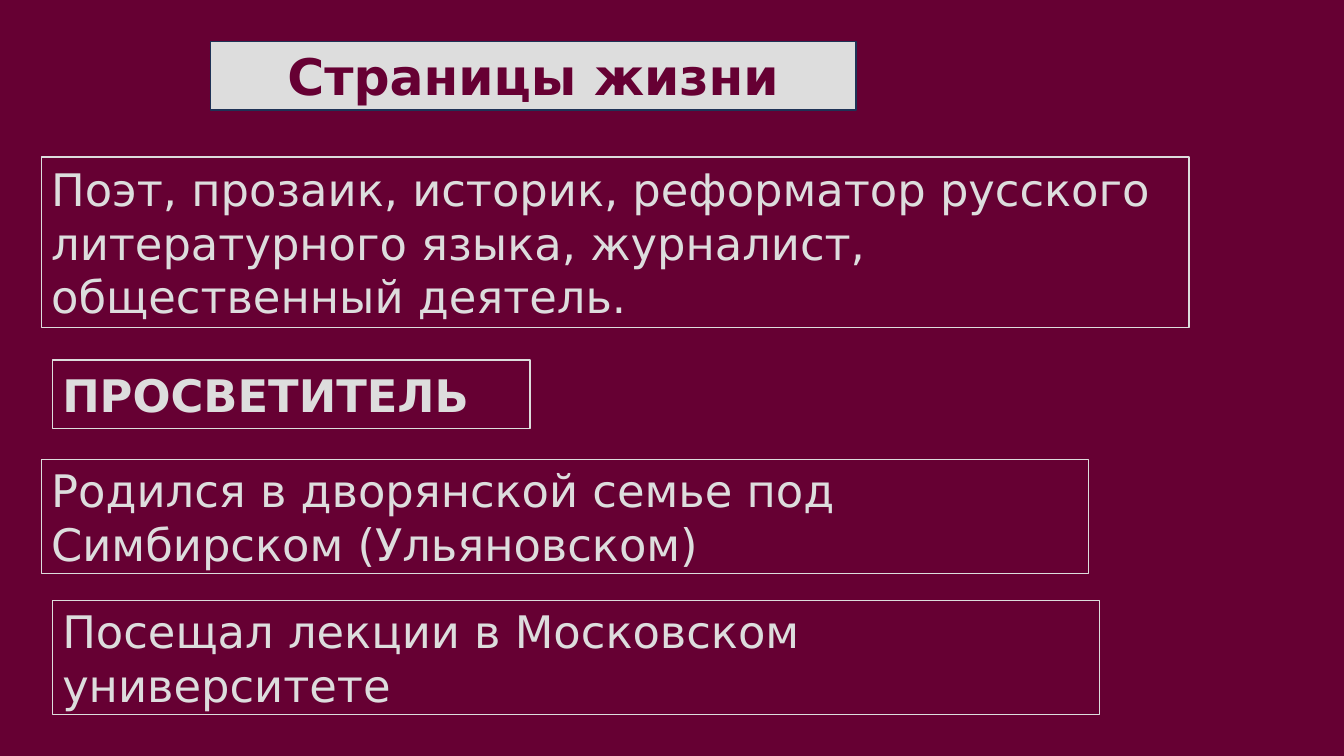
import pptx
import pptx.dml.color
import pptx.enum.shapes
import pptx.enum.text
import pptx.util

Cm = pptx.util.Cm
Pt = pptx.util.Pt
ALIGN = pptx.enum.text.PP_ALIGN

FONT = "DejaVu Sans"
WINE = "660033"
GREY = "DDDDDD"
NAVY = "1E3256"

OUTER_LEFT, INNER_LEFT = 1.04, 1.32
LINE_HEIGHT, PAIR_HEIGHT = 1.73, 2.87
PAIR_WIDTH = 26.39


def paint(color_format, value):
    """Set a colour from a hex string."""
    color_format.rgb = pptx.dml.color.RGBColor.from_string(value)


def add_frame(page, left, top, width, height, outline, fill=None):
    """Add a thin outlined rectangle, filled only if a colour is given."""
    box = page.shapes.add_shape(
        pptx.enum.shapes.MSO_SHAPE.RECTANGLE,
        Cm(left), Cm(top), Cm(width), Cm(height))
    box.shadow.inherit = False
    if fill:
        box.fill.solid()
        paint(box.fill.fore_color, fill)
    else:
        box.fill.background()
    paint(box.line.color, outline)
    box.line.width = Pt(1)
    return box


def write(box, text, size=32, color=GREY, bold=False, align=ALIGN.LEFT):
    """Put one formatted paragraph in a box, centred vertically."""
    frame = box.text_frame
    frame.word_wrap = True
    frame.vertical_anchor = pptx.enum.text.MSO_ANCHOR.MIDDLE
    frame.text = text
    para = frame.paragraphs[0]
    para.alignment = align
    span = para.runs[0]
    span.font.name = FONT
    span.font.size = Pt(size)
    span.font.bold = bold
    paint(span.font.color, color)


def main():
    """Build the slide and save it."""
    deck = pptx.Presentation()
    deck.slide_width, deck.slide_height = Cm(33.87), Cm(19.05)
    page = deck.slides.add_slide(deck.slide_layouts[6])
    page.background.fill.solid()
    paint(page.background.fill.fore_color, WINE)

    title = add_frame(page, 5.31, 1.04, 16.26, LINE_HEIGHT, NAVY, GREY)
    write(title, "Страницы жизни", 36, WINE, True, ALIGN.CENTER)

    facts = [
        (OUTER_LEFT, 3.96, 28.93, 4.29, False,
         "Поэт, прозаик, историк, реформатор русского литературного языка, "
         "журналист, общественный деятель."),
        (INNER_LEFT, 9.07, 12.04, LINE_HEIGHT, True, "ПРОСВЕТИТЕЛЬ"),
        (INNER_LEFT, 15.14, PAIR_WIDTH, PAIR_HEIGHT, False,
         "Посещал лекции в Московском университете"),
        (OUTER_LEFT, 11.58, PAIR_WIDTH, PAIR_HEIGHT, False,
         "Родился в дворянской семье под Симбирском (Ульяновском)"),
    ]
    for left, top, width, height, bold, text in facts:
        write(add_frame(page, left, top, width, height, GREY), text, bold=bold)

    deck.save("out.pptx")


main()
